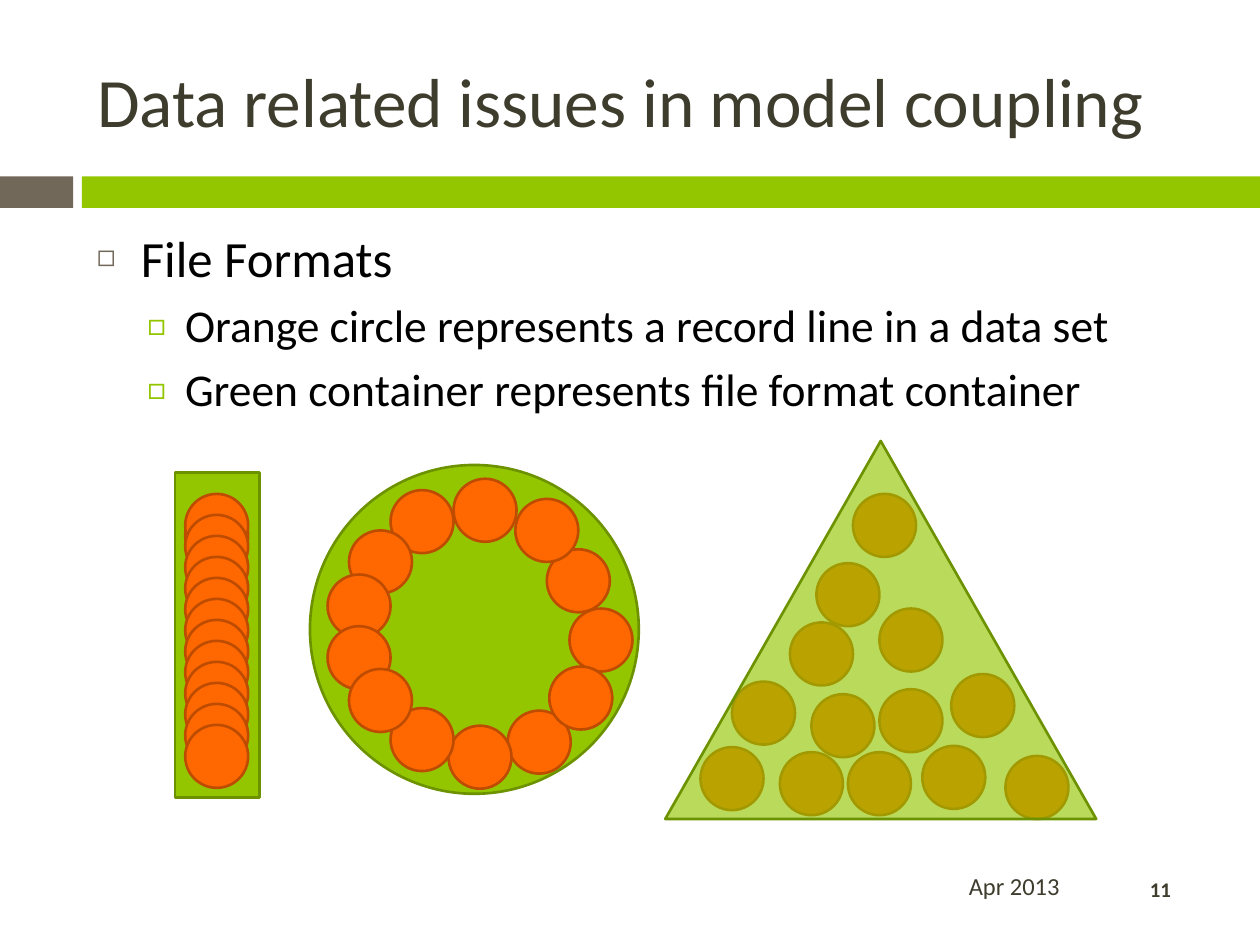
from collections import namedtuple
from dataclasses import dataclass

from lxml import etree
from pptx import Presentation
from pptx import util as u
from pptx.dml.color import RGBColor
from pptx.enum import shapes, text
from pptx.oxml import ns

Box = namedtuple("Box", "left top width height")
Level = namedtuple("Level", "size before margin hang bullet bullet_color bullet_percent")


@dataclass(frozen=True)
class Theme:
    """Colours, font and type sizes of the slide."""
    font: str = "Calibri"
    ink: str = "3E3D2D"
    body: str = "000000"
    taupe: str = "71685A"
    green: str = "94C600"
    green_line: str = "6D9200"
    orange: str = "FF6700"
    orange_line: str = "BD4C00"
    outline: float = 1.5
    title_size: float = 39.6
    date_size: float = 14
    number_size: float = 11.9


THEME = Theme()
LEVELS = (
    Level(29, 7, 0.35, 0.35, "◻", THEME.taupe, 60),
    Level(26, 5.5, 0.7, 0.3, "□", THEME.green, 70),
)
BULLETS = (
    (0, "File Formats"),
    (1, "Orange circle represents a record line in a data set"),
    (1, "Green container represents file format container"),
)
RECORD_SIZE = 0.5
STACK_RECORDS = [(0.08, 0.25)] + [(0.08, 0.17 + step / 6) for step in range(12)]
RING_RECORDS = (
    (2.06, 1.14), (1.57, 1.95), (1.9, 1.6), (1.1, 2.07), (0.64, 1.93),
    (1.88, 0.67), (1.63, 0.27), (1.14, 0.11), (0.64, 0.2), (0.31, 0.52),
    (0.14, 0.87), (0.14, 1.28), (0.31, 1.62),
)
SCATTERED_RECORDS = (
    (1.7, 1.97), (2.7, 2.5), (2.04, 2.42), (1.45, 2.47), (0.91, 2.47),
    (1.7, 1.33), (2.27, 1.85), (1.49, 0.42), (1.2, 0.97), (0.99, 1.44),
    (1.16, 2.01), (0.28, 2.43), (0.53, 1.91),
)


def inches(box):
    """Turn a box in inches into lengths."""
    return [u.Inches(value) for value in box]


def add_run(paragraph, words, size, color, bold=False):
    """Add one formatted run to a paragraph."""
    run = paragraph.add_run()
    run.text = words
    run.font.name = THEME.font
    run.font.size = u.Pt(size)
    run.font.bold = bold
    run.font.color.rgb = RGBColor.from_string(color)


def add_frame(slide, box, anchor):
    """Add a wrapping text box and return its text frame."""
    frame = slide.shapes.add_textbox(*inches(box)).text_frame
    frame.word_wrap = True
    frame.vertical_anchor = anchor
    return frame


def add_shape(parent, kind, box, fill, line=None, opacity=None):
    """Add a flat preset shape to a slide or group."""
    shape = parent.shapes.add_shape(kind, *inches(box))
    shape.shadow.inherit = False
    shape.fill.solid()
    shape.fill.fore_color.rgb = RGBColor.from_string(fill)
    if line:
        shape.line.color.rgb = RGBColor.from_string(line)
        shape.line.width = u.Pt(THEME.outline)
    else:
        shape.line.fill.background()
    if opacity is not None:
        color = shape.fill._xPr.find(ns.qn("a:solidFill"))[0]
        etree.SubElement(color, ns.qn("a:alpha"), val=str(opacity * 1000))


def add_title(slide, box, words):
    """Place and format the title placeholder."""
    title = slide.shapes.title
    title.left, title.top, title.width, title.height = inches(box)
    frame = title.text_frame
    frame.auto_size = text.MSO_AUTO_SIZE.NONE
    frame.vertical_anchor = text.MSO_ANCHOR.MIDDLE
    paragraph = frame.paragraphs[0]
    paragraph.alignment = text.PP_ALIGN.LEFT
    add_run(paragraph, words, THEME.title_size, THEME.ink)


def add_band(slide, box):
    """Draw the two-part band under the title."""
    tab, gap = 0.58, 0.07
    start = tab + gap
    rectangle = shapes.MSO_SHAPE.RECTANGLE
    add_shape(slide, rectangle, box._replace(width=tab), THEME.taupe)
    add_shape(slide, rectangle,
              box._replace(left=box.left + start, width=box.width - start), THEME.green)


def set_bullet(paragraph, level):
    """Give a paragraph its indent and coloured bullet."""
    properties = paragraph._p.get_or_add_pPr()
    properties.set("marL", str(u.Inches(level.margin)))
    properties.set("indent", str(-u.Inches(level.hang)))
    color = etree.SubElement(properties, ns.qn("a:buClr"))
    etree.SubElement(color, ns.qn("a:srgbClr"), val=level.bullet_color)
    etree.SubElement(properties, ns.qn("a:buSzPct"), val=str(level.bullet_percent * 1000))
    etree.SubElement(properties, ns.qn("a:buFont"), typeface=THEME.font)
    etree.SubElement(properties, ns.qn("a:buChar"), char=level.bullet)


def add_bullets(slide, box, bullets):
    """Write the bulleted text."""
    frame = add_frame(slide, box, text.MSO_ANCHOR.TOP)
    for index, (depth, words) in enumerate(bullets):
        paragraph = frame.add_paragraph() if index else frame.paragraphs[0]
        level = LEVELS[depth]
        paragraph.level = depth
        paragraph.space_before = u.Pt(level.before)
        set_bullet(paragraph, level)
        add_run(paragraph, words, level.size, THEME.body)


def add_container(slide, box, kind, records, opacity=None):
    """Group a container with its records, veiling them when translucent."""
    group = slide.shapes.add_group_shape()
    container = (group, kind, box, THEME.green, THEME.green_line, opacity)
    if opacity is None:
        add_shape(*container)
    for across, down in records:
        record = Box(box.left + across, box.top + down, RECORD_SIZE, RECORD_SIZE)
        add_shape(group, shapes.MSO_SHAPE.OVAL, record, THEME.orange, THEME.orange_line)
    if opacity is not None:
        add_shape(*container)


def add_footer(slide, box, date, number):
    """Write the date and the slide number."""
    number_width = 0.58
    number_left = box.left + box.width - number_width
    date_box = box._replace(width=5.93)
    number_box = Box(number_left, box.top + 0.09, number_width, 0.27)
    align = text.PP_ALIGN
    for part, words, size, bold, alignment in (
        (date_box, date, THEME.date_size, False, align.RIGHT),
        (number_box, number, THEME.number_size, True, align.CENTER),
    ):
        paragraph = add_frame(slide, part, text.MSO_ANCHOR.MIDDLE).paragraphs[0]
        paragraph.alignment = alignment
        add_run(paragraph, words, size, THEME.ink, bold)


def main():
    """Build and save the presentation."""
    presentation = Presentation()
    presentation.slide_width, presentation.slide_height = u.Inches(10), u.Inches(7.5)
    slide = presentation.slides.add_slide(presentation.slide_layouts[5])
    preset = shapes.MSO_SHAPE
    add_band(slide, Box(0, 1.4, 10, 0.25))
    add_title(slide, Box(0.67, 0.25, 8.92, 1.08), "Data related issues in model coupling")
    add_footer(slide, Box(2.58, 6.83, 6.92, 0.4), "Apr 2013", "11")
    add_bullets(slide, Box(0.67, 1.75, 8.92, 4.92), BULLETS)
    add_container(slide, Box(1.39, 3.75, 0.67, 2.58), preset.RECTANGLE, STACK_RECORDS)
    add_container(slide, Box(2.46, 3.69, 2.61, 2.61), preset.OVAL, RING_RECORDS)
    add_container(slide, Box(5.28, 3.5, 3.42, 3), preset.ISOSCELES_TRIANGLE,
                  SCATTERED_RECORDS, 64)
    presentation.save("out.pptx")


if __name__ == "__main__":
    main()
